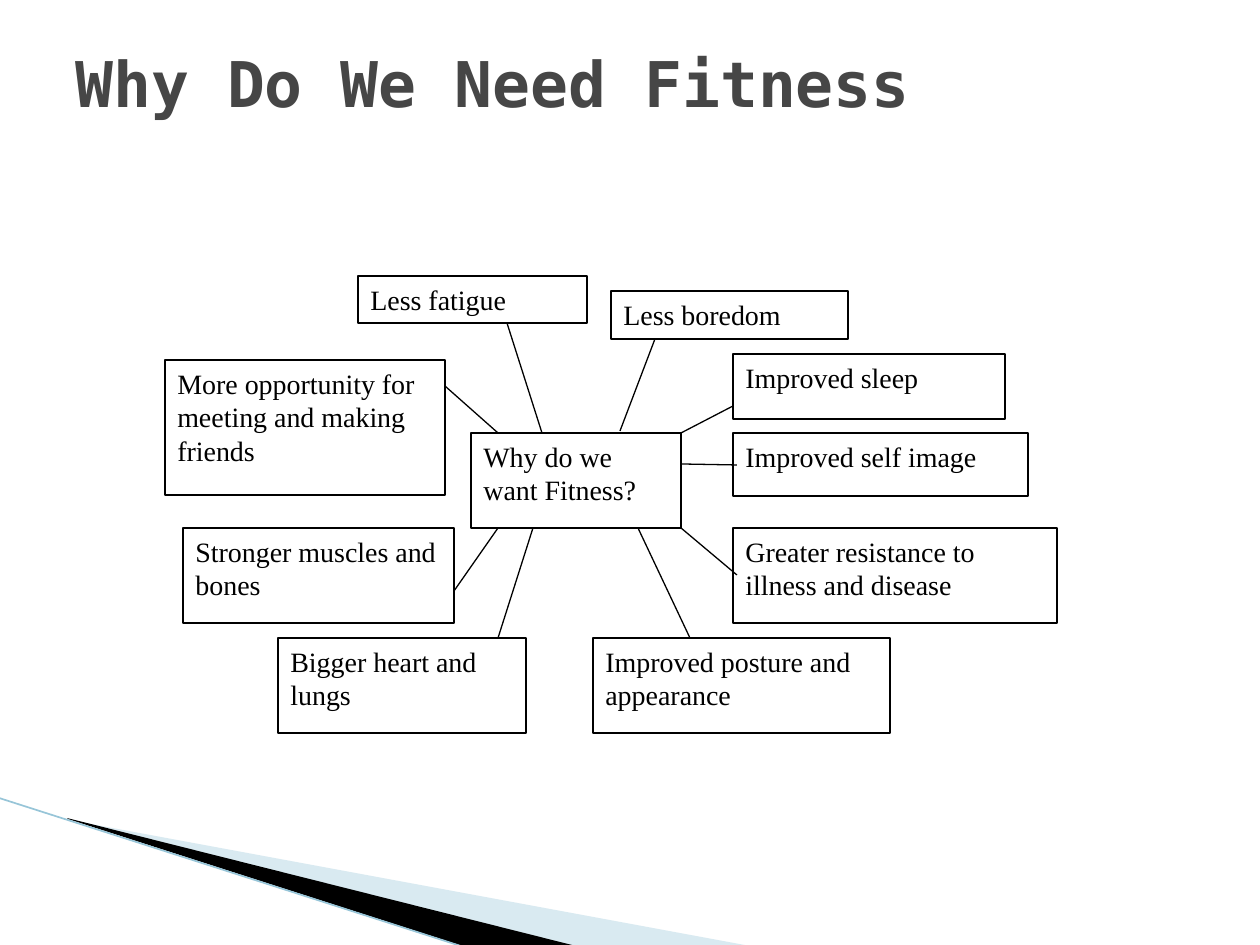
from dataclasses import dataclass
from typing import NamedTuple

from lxml.etree import SubElement
from pptx import Presentation
from pptx.dml.color import RGBColor as RGB
from pptx.enum.shapes import MSO_CONNECTOR as Link, MSO_SHAPE as Kind
from pptx.enum.text import MSO_ANCHOR as Anchor, PP_ALIGN as Align
from pptx.oxml.ns import qn
from pptx.util import Pt

SCALE = 914400 / 126  # EMU in one px


@dataclass(frozen=True)
class Theme:
    ink: str = "000000"
    paper: str = "FFFFFF"
    title: str = "464646"
    pale: str = "A0CBDC"
    edge: str = "97C5D8"
    head: str = "DejaVu Sans Mono"
    body: str = "Times New Roman"
    big: int = 36
    small: int = 16
    thin: float = 0.75
    rim: float = 0.95


class Box(NamedTuple):
    text: str
    left: int
    top: int
    width: int
    height: int


class Line(NamedTuple):
    x1: int
    y1: int
    x2: int
    y2: int


class Wedge(NamedTuple):
    points: list[tuple[int, int]]
    color: str
    alpha: int


THEME = Theme()

TITLE = Box("Why Do We Need Fitness", 63, 38, 1134, 157)

BOXES = [
    Box("Why do we want Fitness?", 471, 433, 210, 95),
    Box("Less fatigue", 358, 276, 229, 47),
    Box("Less boredom", 611, 291, 237, 48),
    Box("More opportunity for meeting and making friends", 165, 360, 280, 135),
    Box("Stronger muscles and bones", 183, 528, 271, 95),
    Box("Bigger heart and lungs", 278, 638, 248, 95),
    Box("Improved posture and appearance", 593, 638, 297, 95),
    Box("Greater resistance to illness and disease", 733, 528, 324, 95),
    Box("Improved sleep", 733, 354, 272, 65),
    Box("Improved self image", 733, 433, 295, 63),
]

SPOKES = [
    Line(507, 323, 542, 433),
    Line(445, 386, 498, 433),
    Line(498, 528, 454, 591),
    Line(533, 528, 498, 638),
    Line(638, 528, 690, 638),
    Line(681, 528, 737, 575),
    Line(681, 464, 737, 465),
    Line(681, 433, 733, 406),
    Line(620, 431, 655, 339),
]

WEDGES = [
    Wedge([(69, 820), (750, 946), (575, 946), (69, 819)], THEME.pale, 40),
    Wedge([(67, 818), (576, 946), (469, 948), (68, 819)], THEME.ink, 100),
]
RIM = Line(-1, 798, 467, 948)


def emu(*px: int) -> list[int]:
    return [round(n * SCALE) for n in px]


def paint(shape, color: str) -> None:
    shape.shadow.inherit = False
    shape.fill.solid()
    shape.fill.fore_color.rgb = RGB.from_string(color)


def stroke(shape, color: str, width: float) -> None:
    shape.line.color.rgb = RGB.from_string(color)
    shape.line.width = Pt(width)


def write(shape, text: str, color: str, form: dict) -> None:
    """Fill a shape with one left-aligned paragraph that starts at the top."""
    frame = shape.text_frame
    frame.word_wrap = True
    frame.vertical_anchor = Anchor.TOP
    para = frame.paragraphs[0]
    para.alignment = Align.LEFT
    run = para.add_run()
    run.text = text
    for name, value in form.items():
        setattr(run.font, name, value)
    run.font.color.rgb = RGB.from_string(color)


def draw_wedge(slide, wedge: Wedge) -> None:
    first, *rest = wedge.points
    path = slide.shapes.build_freeform(*first, scale=SCALE)
    path.add_line_segments(rest, close=True)
    shape = path.convert_to_shape()
    paint(shape, wedge.color)
    shape.line.fill.background()
    if wedge.alpha < 100:
        tint = shape.fill._xPr.find(qn("a:solidFill"))[0]
        SubElement(tint, qn("a:alpha")).set("val", str(wedge.alpha * 1000))


def draw_line(slide, line: Line, color: str, width: float) -> None:
    link = slide.shapes.add_connector(Link.STRAIGHT, *emu(*line))
    stroke(link, color, width)
    SubElement(link._element.spPr, qn("a:effectLst"))


def draw_title(slide, box: Box) -> None:
    shape = slide.shapes.add_textbox(*emu(*box[1:]))
    form = {"name": THEME.head, "size": Pt(THEME.big), "bold": True}
    write(shape, box.text, THEME.title, form)


def draw_box(slide, box: Box) -> None:
    shape = slide.shapes.add_shape(Kind.RECTANGLE, *emu(*box[1:]))
    paint(shape, THEME.paper)
    stroke(shape, THEME.ink, THEME.thin)
    form = {"name": THEME.body, "size": Pt(THEME.small)}
    write(shape, box.text, THEME.ink, form)


def main() -> None:
    deck = Presentation()
    deck.slide_width, deck.slide_height = emu(1260, 945)
    slide = deck.slides.add_slide(deck.slide_layouts[6])
    for wedge in WEDGES:
        draw_wedge(slide, wedge)
    draw_line(slide, RIM, THEME.edge, THEME.rim)
    draw_title(slide, TITLE)
    for box in BOXES:
        draw_box(slide, box)
    for spoke in SPOKES:
        draw_line(slide, spoke, THEME.ink, THEME.thin)
    deck.save("out.pptx")


if __name__ == "__main__":
    main()
